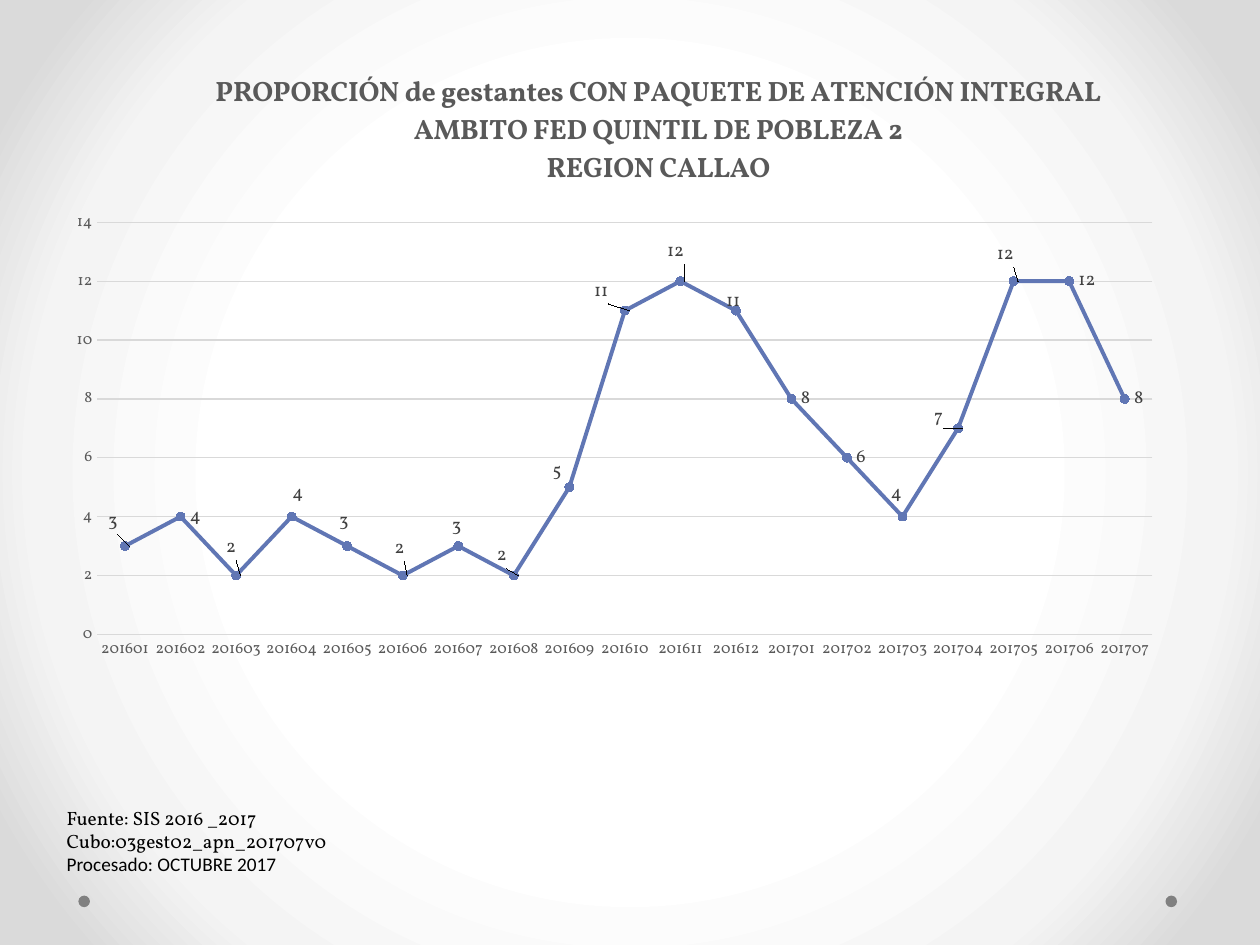
from dataclasses import dataclass

from lxml.etree import SubElement
from pptx import Presentation
from pptx.chart.data import CategoryChartData
from pptx.dml.color import RGBColor
from pptx.enum.chart import XL_CHART_TYPE as ChartType
from pptx.enum.chart import XL_LABEL_POSITION as LabelPosition
from pptx.enum.chart import XL_MARKER_STYLE as MarkerStyle
from pptx.enum.chart import XL_TICK_MARK as TickMark
from pptx.enum.shapes import MSO_SHAPE as Shape
from pptx.enum.text import MSO_AUTO_SIZE as AutoSize
from pptx.oxml import parse_xml
from pptx.oxml.ns import nsdecls, qn
from pptx.util import Pt

WHITE = RGBColor(0xFF, 0xFF, 0xFF)
PALE = RGBColor(0xF4, 0xF4, 0xF4)
SILVER = RGBColor(0xDA, 0xDA, 0xDA)
GRID = RGBColor(0xD9, 0xD9, 0xD9)
DOT_GREY = RGBColor(0x80, 0x80, 0x80)
AXIS_GREY = RGBColor(0x59, 0x59, 0x59)
LABEL_GREY = RGBColor(0x40, 0x40, 0x40)
BLACK = RGBColor(0, 0, 0)
BLUE = RGBColor(0x60, 0x76, 0xB4)
SERIF = "Vollkorn"
SANS = "Calibri"

AXIS_FONT = {"name": SERIF, "size": Pt(9)}
LABEL_FONT = {"name": SERIF, "size": Pt(10.5)}
TITLE_FONT = {"name": SERIF, "size": Pt(16), "bold": True}
CHART_FONT = {"name": SERIF, "size": Pt(10)}
GRADIENT = ((50, WHITE), (76, PALE), (92, SILVER))

TITLE_LINES = (
    "PROPORCIÓN de gestantes CON PAQUETE DE ATENCIÓN INTEGRAL",
    "AMBITO FED QUINTIL DE POBLEZA 2",
    "REGION CALLAO",
)
MONTHS = [f"2016{m:02}" for m in range(1, 13)] + [f"2017{m:02}" for m in range(1, 8)]
COUNTS = (3, 4, 2, 4, 3, 2, 3, 2, 5, 11, 12, 11, 8, 6, 4, 7, 12, 12, 8)
LABEL_SHIFTS = {
    0: (-15, -14), 2: (-11, -16), 3: (-5, -13), 4: (-10, -14), 5: (-10, -15),
    6: (-9, -11), 7: (-15, -11), 8: (-15, -9), 9: (-23, -11), 10: (-13, -17),
    11: (-11, -5), 14: (-12, -13), 15: (-19, -6), 16: (-15, -15),
}


@dataclass(frozen=True)
class Box:
    left: float
    top: float
    width: float
    height: float

    def lengths(self) -> tuple:
        return tuple(Pt(v) for v in (self.left, self.top, self.width, self.height))


@dataclass(frozen=True)
class SourceLine:
    text: str
    font: str


CHART_BOX = Box(31, 37.4, 640, 347)
PLOT_BOX = Box(24.6, 89.7, 603, 235.5)
DOTS = [Box(left, 511.8, 6.6, 6.6) for left in (44.8, 666)]
SOURCE_BOX = Box(31, 457.2, 232.6, 60.5)
SOURCE_LINES = (
    SourceLine("Fuente: SIS 2016 _2017", SERIF),
    SourceLine("Cubo:03gest02_apn_201707v0", SERIF),
    SourceLine("Procesado: OCTUBRE 2017", SANS),
)


def apply_format(target, values: dict, color=None) -> None:
    for attribute, value in values.items():
        setattr(target, attribute, value)
    if color is not None:
        target.color.rgb = color


def paint_background(slide) -> None:
    stops = "".join(
        f'<a:gs pos="{pos * 1000}"><a:srgbClr val="{color}"/></a:gs>'
        for pos, color in GRADIENT
    )
    background = parse_xml(
        f'<p:bg {nsdecls("p", "a")}><p:bgPr><a:gradFill><a:gsLst>{stops}</a:gsLst>'
        '<a:path path="circle"><a:fillToRect l="50000" t="50000" r="50000" b="50000"/>'
        "</a:path></a:gradFill><a:effectLst/></p:bgPr></p:bg>"
    )
    slide.element.cSld.insert(0, background)


def draw_dot(slide, box: Box) -> None:
    dot = slide.shapes.add_shape(Shape.OVAL, *box.lengths())
    dot.shadow.inherit = False
    dot.fill.solid()
    dot.fill.fore_color.rgb = DOT_GREY
    dot.line.fill.background()


def draw_source(slide) -> None:
    frame = slide.shapes.add_textbox(*SOURCE_BOX.lengths()).text_frame
    apply_format(frame, {"word_wrap": True, "auto_size": AutoSize.SHAPE_TO_FIT_TEXT})
    frame.text = "\n".join(line.text for line in SOURCE_LINES)
    for paragraph, line in zip(frame.paragraphs, SOURCE_LINES):
        font = paragraph.runs[0].font
        apply_format(font, {"name": line.font, "size": Pt(11)}, BLACK)


def manual_layout(parent, index: int, values: dict) -> None:
    for existing in parent.findall(qn("c:layout")):
        parent.remove(existing)
    layout = SubElement(parent, qn("c:layout"))
    parent.insert(index, layout)
    manual = SubElement(layout, qn("c:manualLayout"))
    for tag, value in values.items():
        SubElement(manual, qn(f"c:{tag}")).set("val", str(value))


def fractions(x: float, y: float) -> dict:
    return {"x": round(x / CHART_BOX.width, 4), "y": round(y / CHART_BOX.height, 4)}


def format_title(chart) -> None:
    frame = chart.chart_title.text_frame
    frame.text = "\n".join(TITLE_LINES)
    for paragraph in frame.paragraphs:
        apply_format(paragraph.runs[0].font, TITLE_FONT, AXIS_GREY)
    title = chart.chart_title._element
    manual_layout(title, 1, {"xMode": "edge", "yMode": "edge", **fractions(90, 2)})
    chart.chart_title.include_in_layout = False


def format_axes(chart) -> None:
    ticks = {"major_tick_mark": TickMark.NONE, "minor_tick_mark": TickMark.NONE}
    for axis in (chart.category_axis, chart.value_axis):
        apply_format(axis, ticks)
        apply_format(axis.tick_labels.font, AXIS_FONT, AXIS_GREY)
    counts_axis = chart.value_axis
    apply_format(counts_axis, {"minimum_scale": 0, "maximum_scale": 14, "major_unit": 2})
    apply_format(counts_axis.tick_labels, {"number_format": "0", "number_format_is_linked": False})
    counts_axis.format.line.fill.background()
    for line in (chart.category_axis.format.line, counts_axis.major_gridlines.format.line):
        apply_format(line, {"width": Pt(0.75)}, GRID)


def format_series(series) -> None:
    series.smooth = False
    apply_format(series.format.line, {"width": Pt(2.25)}, BLUE)
    apply_format(series.marker, {"style": MarkerStyle.CIRCLE, "size": 5})
    for part in (series.marker.format.fill, series.marker.format.line.fill):
        part.solid()
        part.fore_color.rgb = BLUE
    labels = series.data_labels
    apply_format(labels, {
        "show_value": True, "position": LabelPosition.RIGHT,
        "number_format": "0", "number_format_is_linked": False,
    })
    apply_format(labels.font, LABEL_FONT, LABEL_GREY)
    for index, shift in LABEL_SHIFTS.items():
        label = series.points[index].data_label
        apply_format(label.font, LABEL_FONT, LABEL_GREY)
        label.position = LabelPosition.RIGHT
        manual_layout(labels._element.get_dLbl_for_point(index), 1, fractions(*shift))


def draw_chart(slide) -> None:
    data = CategoryChartData(number_format="0")
    data.categories = MONTHS
    data.add_series("Series 1", COUNTS)
    chart = slide.shapes.add_chart(ChartType.LINE_MARKERS, *CHART_BOX.lengths(), data).chart
    chart.has_legend = False
    apply_format(chart.font, CHART_FONT, BLACK)
    chart.plots[0].vary_by_categories = False
    format_title(chart)
    format_axes(chart)
    format_series(chart.plots[0].series[0])
    size = fractions(PLOT_BOX.width, PLOT_BOX.height)
    manual_layout(chart._chartSpace.chart.plotArea, 0, {
        "layoutTarget": "inner", "xMode": "edge", "yMode": "edge",
        **fractions(PLOT_BOX.left, PLOT_BOX.top), "w": size["x"], "h": size["y"],
    })


def main() -> None:
    deck = Presentation()
    apply_format(deck, {"slide_width": Pt(720), "slide_height": Pt(540)})
    slide = deck.slides.add_slide(deck.slide_layouts[6])
    paint_background(slide)
    for box in DOTS:
        draw_dot(slide, box)
    draw_source(slide)
    draw_chart(slide)
    deck.save("out.pptx")


if __name__ == "__main__":
    main()
